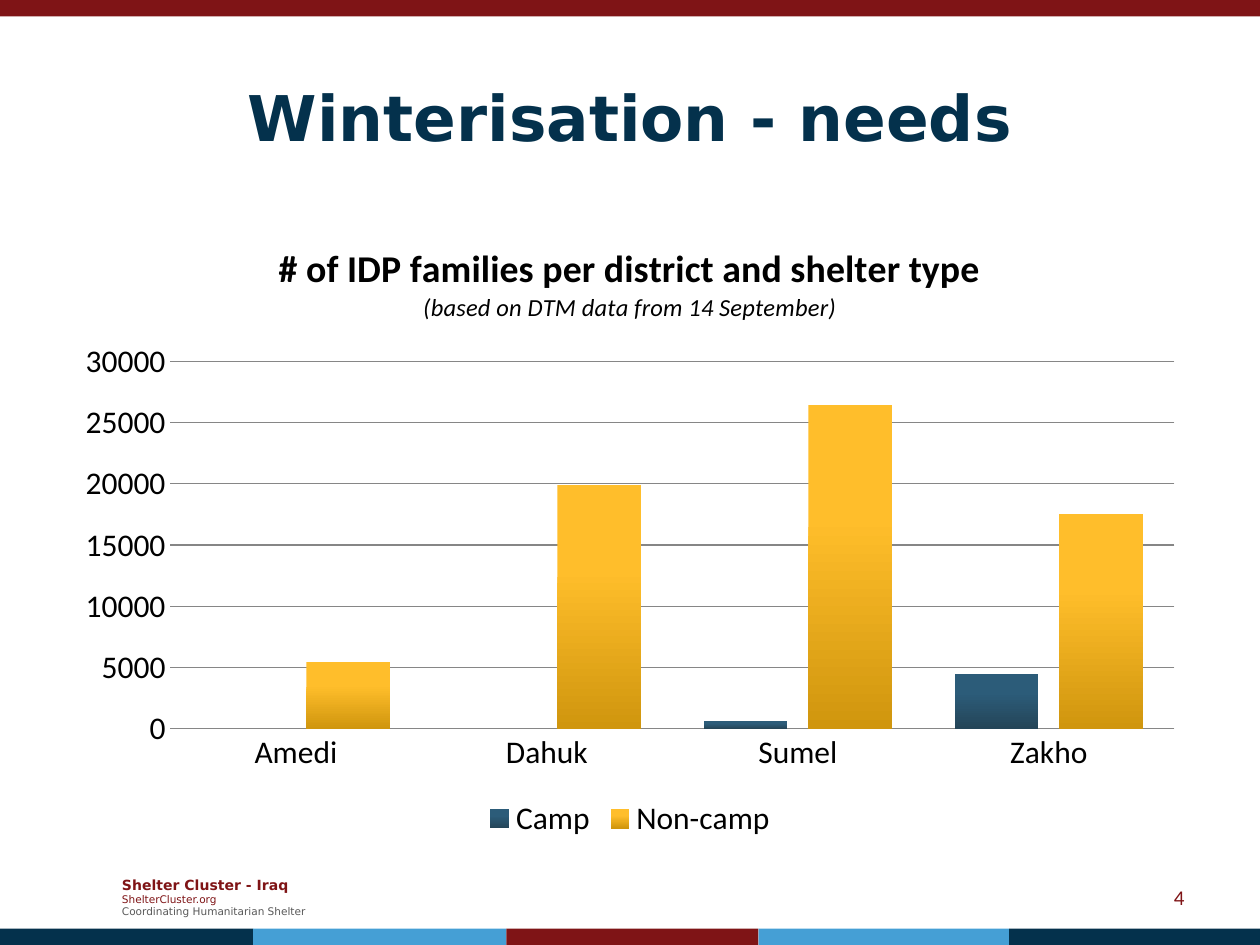
from pptx import Presentation
from pptx.chart.data import CategoryChartData
from pptx.dml.color import RGBColor
from pptx.enum.chart import XL_CHART_TYPE, XL_LEGEND_POSITION, XL_TICK_MARK
from pptx.enum.shapes import MSO_SHAPE
from pptx.enum.text import MSO_ANCHOR, PP_ALIGN
from pptx.util import Inches, Pt

RECT = MSO_SHAPE.RECTANGLE
MIDDLE = MSO_ANCHOR.MIDDLE
CENTER, RIGHT = PP_ALIGN.CENTER, PP_ALIGN.RIGHT
COLUMN = XL_CHART_TYPE.COLUMN_CLUSTERED
BOTTOM = XL_LEGEND_POSITION.BOTTOM
NO_TICK = XL_TICK_MARK.NONE
NAVY, BLUE, RED, GRAY = "04314C", "459FD5", "7F1416", "868686"
SANS, BODY = "DejaVu Sans", "Calibri"


def color(code):
    return RGBColor.from_string(code)


def style(font, size, name, code, bold=False, italic=False):
    font.size = Pt(size)
    font.name = name
    font.color.rgb = color(code)
    font.bold = bold
    font.italic = italic


deck = Presentation()
deck.slide_width, deck.slide_height = Inches(10), Inches(7.5)
slide = deck.slides.add_slide(deck.slide_layouts[5])
shapes = slide.shapes

edges = [0, 2.01, 4.02, 6.02, 8.01, 10]
bands = [(0, 0, 10, RED)]
for left, right, code in zip(edges, edges[1:], [NAVY, BLUE, RED, BLUE, NAVY]):
    bands.append((left, 7.37, right - left, code))
for left, top, width, code in bands:
    band = shapes.add_shape(RECT, Inches(left), Inches(top), Inches(width), Inches(0.13))
    band.shadow.inherit = False
    band.fill.solid()
    band.fill.fore_color.rgb = color(code)
    band.line.fill.background()

title = shapes.title
title.left, title.top = Inches(0.5), Inches(0.3)
title.width, title.height = Inches(9), Inches(1.25)
title.text_frame.text = "Winterisation - needs"
title.text_frame.vertical_anchor = MIDDLE
head = title.text_frame.paragraphs[0]
head.alignment = CENTER
style(head.font, 36, SANS, NAVY, bold=True)

footer = shapes.add_textbox(Inches(0.87), Inches(6.9), Inches(1.73), Inches(0.44)).text_frame
footer.word_wrap = True
footer.vertical_anchor = MIDDLE
footer.text = "Shelter Cluster - Iraq\nShelterCluster.org\nCoordinating Humanitarian Shelter"
looks = [(8, RED, True), (6, RED, False), (6, "595959", False)]
for para, (size, code, bold) in zip(footer.paragraphs, looks):
    style(para.font, size, SANS, code, bold)

number = shapes.add_textbox(Inches(7.17), Inches(6.92), Inches(2.33), Inches(0.4)).text_frame
number.word_wrap = True
number.vertical_anchor = MIDDLE
number.text = "4"
number.paragraphs[0].alignment = RIGHT
style(number.paragraphs[0].font, 12, BODY, RED)

data = CategoryChartData()
data.categories = ["Amedi", "Dahuk", "Sumel", "Zakho"]
data.add_series("Camp", [0, 0, 600, 4500])
data.add_series("Non-camp", [5400, 19900, 26400, 17500])
chart = shapes.add_chart(COLUMN, Inches(0.5), Inches(1.75), Inches(9), Inches(4.95), data).chart
style(chart.font, 18, BODY, "000000")

chart.has_title = True
caption = chart.chart_title.text_frame
caption.text = "# of IDP families per district and shelter type\n(based on DTM data from 14 September)"
main, sub = caption.paragraphs
style(main.font, 21.6, BODY, "000000", bold=True)
style(sub.font, 14, BODY, "000000", italic=True)
chart.chart_title.include_in_layout = False

chart.has_legend = True
chart.legend.position = BOTTOM
chart.legend.include_in_layout = False

x_axis, y_axis = chart.category_axis, chart.value_axis
for axis in (x_axis, y_axis):
    axis.major_tick_mark = NO_TICK
    axis.minor_tick_mark = NO_TICK
x_axis.format.line.color.rgb = color(GRAY)
y_axis.format.line.fill.background()
y_axis.minimum_scale, y_axis.maximum_scale = 0, 30000
y_axis.major_unit = 5000
y_axis.has_major_gridlines = True
y_axis.major_gridlines.format.line.color.rgb = color(GRAY)
y_axis.major_gridlines.format.line.width = Pt(0.75)

plot = chart.plots[0]
plot.vary_by_categories = False
plot.gap_width, plot.overlap = 75, -25
for series, shades in zip(plot.series, [("2C5C79", "244558"), ("FFBE2B", "D0960E")]):
    fill = series.format.fill
    fill.gradient()
    fill.gradient_angle = 270
    for stop, shade, place in zip(fill.gradient_stops, shades, (0.35, 1)):
        stop.color.rgb = color(shade)
        stop.position = place
    series.format.line.fill.background()
    series.invert_if_negative = False

deck.save("out.pptx")
